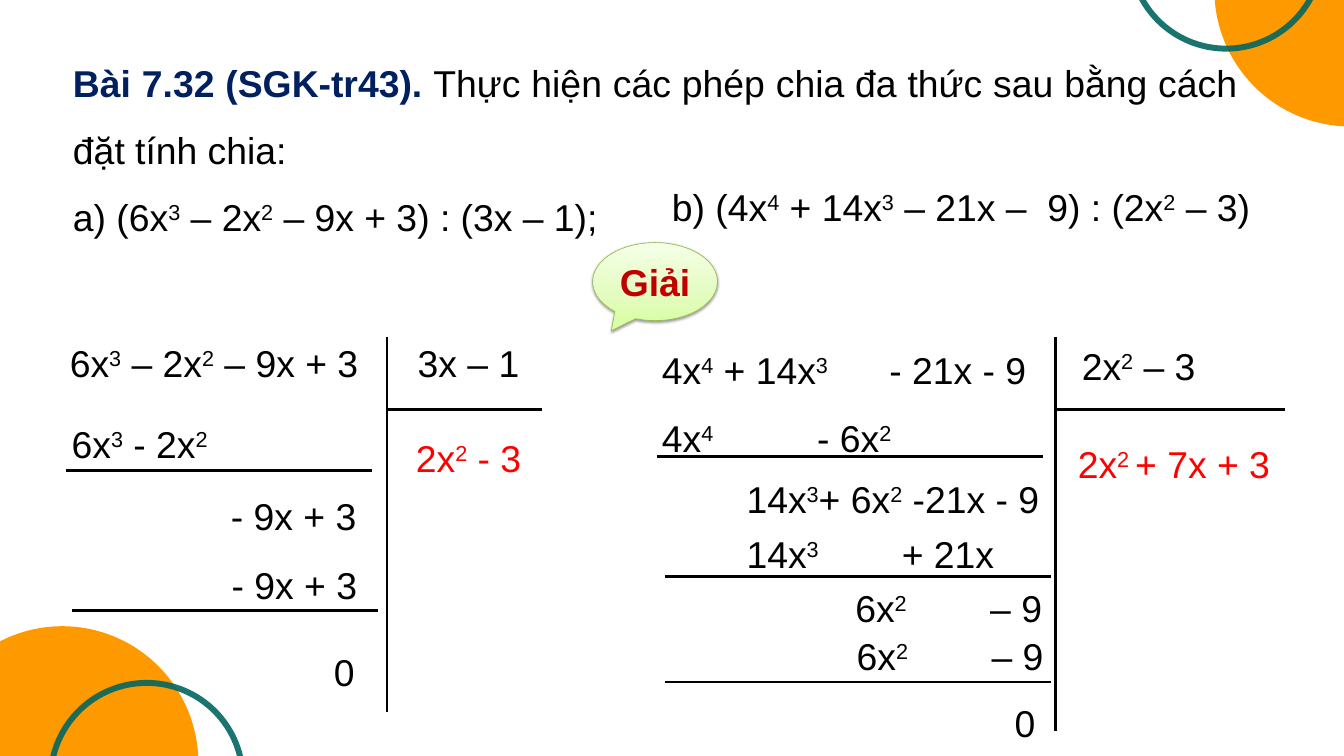
import copy

from lxml import etree
from pptx import Presentation
from pptx import util as u
from pptx.dml.color import RGBColor
from pptx.enum import shapes, text
from pptx.oxml.ns import qn

BLACK, NAVY, RED, CRIMSON = "000000", "002060", "FF0000", "C00000"
ORANGE, TEAL, OLIVE = "FF9900", "036660", "98B955"
LIMES = ((0, "DAFDA7"), (0.35, "E4FCC2"), (1, "F5FFE7"))
TALL = {"alignment": text.PP_ALIGN.JUSTIFY, "line_spacing": 1.5, "space_after": u.Pt(8)}
TITLE = {"alignment": text.PP_ALIGN.JUSTIFY, "line_spacing": 1.5}
LOW = {"alignment": text.PP_ALIGN.JUSTIFY, "space_after": u.Pt(8)}
PLAIN = {}


def color(value):
    return RGBColor.from_string(value)


def sub(parent, tag, **attrs):
    return etree.SubElement(parent, qn(tag), {k: str(v) for k, v in attrs.items()})


class Board:
    """Draws styled elements on the current slide, with lengths in centimetres."""

    font = {"name": "Arial", "size": u.Pt(40)}

    def __init__(self, prs):
        self.s = prs.slides.add_slide(prs.slide_layouts[6])

    def add_runs(self, p, markup, rgb=BLACK, bold=False):
        for i, part in enumerate(markup.split("^")):
            if not part:
                continue
            r = p.add_run()
            r.text = part
            for key, value in {**self.font, "bold": bold}.items():
                setattr(r.font, key, value)
            r.font.color.rgb = color(rgb)
            if i % 2:
                r._r.get_or_add_rPr().set("baseline", "30000")

    def box(self, x, y, w, h, paragraphs, style=PLAIN, tab=None):
        tf = self.s.shapes.add_textbox(*map(u.Cm, (x, y, w, h))).text_frame
        tf.word_wrap = True
        tf.auto_size = text.MSO_AUTO_SIZE.SHAPE_TO_FIT_TEXT
        for i, runs in enumerate(paragraphs):
            p = tf.add_paragraph() if i else tf.paragraphs[0]
            for key, value in style.items():
                setattr(p, key, value)
            if tab:
                tabs = sub(p._p.get_or_add_pPr(), "a:tabLst")
                sub(tabs, "a:tab", pos=int(u.Cm(tab)), algn="l")
            for run in runs:
                self.add_runs(p, *run)

    def term(self, x, y, w, markup, style=TALL, rgb=BLACK, tab=None):
        self.box(x, y, w, 2.82 if style is TALL else 1.96, [[(markup, rgb)]], style, tab)

    def rule(self, x1, y1, x2, y2):
        sp = self.s.shapes.add_connector(
            shapes.MSO_CONNECTOR.STRAIGHT, *map(u.Cm, (x1, y1, x2, y2)))
        sp.line.color.rgb = color(BLACK)
        sp.line.width = u.Pt(3)
        sub(sp._element.spPr, "a:effectLst")

    def disc(self, x, y, w, h, kind, rgb):
        sp = self.s.shapes.add_shape(kind, *map(u.Cm, (x, y, w, h)))
        sp.shadow.inherit = False
        sp.fill.solid()
        sp.fill.fore_color.rgb = color(rgb)
        sp.line.fill.background()
        return sp

    def corner(self, disc_x, disc_y, ring_x, ring_y):
        self.disc(disc_x, disc_y, 10.29, 10.34, shapes.MSO_SHAPE.OVAL, ORANGE)
        sp = self.disc(ring_x, ring_y, 7.49, 7.49, shapes.MSO_SHAPE.DONUT, TEAL)
        sp.adjustments[0] = 0.03
        sub(sp._element.spPr.find(".//" + qn("a:srgbClr")), "a:alpha", val=90000)

    def callout(self, x, y, w, h, label):
        sp = self.s.shapes.add_shape(
            shapes.MSO_SHAPE.OVAL_CALLOUT, *map(u.Cm, (x, y, w, h)))
        sp.adjustments[0], sp.adjustments[1] = -0.35, 0.63
        sp.fill.gradient()
        sp.fill.gradient_angle = 90
        spPr = sp._element.spPr
        stops = spPr.find(".//" + qn("a:gsLst"))
        stops.append(copy.deepcopy(stops[0]))
        for stop, (position, rgb) in zip(sp.fill.gradient_stops, LIMES):
            stop.position = position
            stop.color.rgb = color(rgb)
        sp.line.color.rgb = color(OLIVE)
        sp.line.width = u.Pt(0.75)
        sp.shadow.inherit = False
        shadow = sub(spPr.find(qn("a:effectLst")), "a:outerShdw", blurRad=int(u.Pt(3.1)),
                     dist=int(u.Pt(1.6)), dir=5400000, rotWithShape=0)
        sub(sub(shadow, "a:srgbClr", val=BLACK), "a:alpha", val=38000)
        tf = sp.text_frame
        tf.word_wrap = False
        tf.vertical_anchor = text.MSO_ANCHOR.MIDDLE
        p = tf.paragraphs[0]
        p.alignment = text.PP_ALIGN.CENTER
        self.add_runs(p, label, CRIMSON, True)


def exercise(b):
    b.box(2.51, 1.3, 44.5, 7.95, [
        [("Bài 7.32 (SGK-tr43). ", NAVY, True),
         ("Thực hiện các phép chia đa thức sau bằng cách đặt tính chia:",)],
        [("a) (6x^3^ – 2x^2^ – 9x + 3) : (3x – 1);",)]], TITLE)
    b.term(25.15, 6.83, 22.83, "b) (4x^4^ + 14x^3^ – 21x –  9) : (2x^2^ – 3)", PLAIN)
    b.callout(22.4, 9.17, 4.72, 2.95, "Giải")


def division_a(b):
    b.term(2.39, 12.75, 11.68, "6x^3^ – 2x^2^ – 9x + 3", PLAIN)
    b.term(15.54, 12.75, 4.45, "3x – 1", PLAIN)
    b.term(15.47, 15.47, 4.6, "2x^2^ - 3", rgb=RED)
    b.term(2.46, 14.96, 6.65, "6x^3^ - 2x^2")
    b.term(8.48, 17.68, 5.31, "- 9x + 3")
    b.term(8.51, 20.27, 5.31, "- 9x + 3")
    b.term(12.37, 23.57, 1.3, "0")
    b.rule(14.63, 12.75, 14.63, 26.9)
    b.rule(14.63, 15.47, 20.5, 15.47)
    for x, y in ((2.51, 17.78), (2.74, 23.09)):
        b.rule(x, y, x + 11.56, y)


def division_b(b):
    b.term(24.77, 13, 14.6, "4x^4^ + 14x^3^\t- 21x - 9", PLAIN, tab=8.6)
    b.term(40.64, 12.85, 4.93, "2x^2^ – 3", PLAIN)
    b.term(40.49, 15.72, 7.82, "2x^2 ^+ 7x + 3", rgb=RED)
    b.term(24.77, 14.73, 9.42, "4x^4^\t- 6x^2", tab=5.87)
    b.term(27.97, 17.02, 11.84, "14x^3^+ 6x^2^ -21x - 9")
    b.term(27.97, 19.1, 10.03, "14x^3^\t+ 21x", tab=5.87)
    b.term(32.08, 22, 7.87, "6x^2^\t– 9", LOW, tab=5.1)
    b.term(32.13, 23.8, 7.87, "6x^2^\t– 9", LOW, tab=5.1)
    b.term(38.1, 25.5, 1.3, "0")
    b.rule(39.9, 12.75, 39.9, 27.64)
    b.rule(39.9, 15.47, 48.56, 15.47)
    for x, y in ((24.84, 17.25), (25.15, 21.79), (25.15, 25.78)):
        b.rule(x, y, x + 14.58, y)


def main():
    prs = Presentation()
    prs.slide_width, prs.slide_height = u.Cm(50.8), u.Cm(28.575)
    b = Board(prs)
    b.corner(-2.79, 23.67, 1.8, 25.7)
    b.corner(45.9, -5.56, 42.6, -5.54)
    exercise(b)
    division_a(b)
    division_b(b)
    prs.save("out.pptx")


if __name__ == "__main__":
    main()
